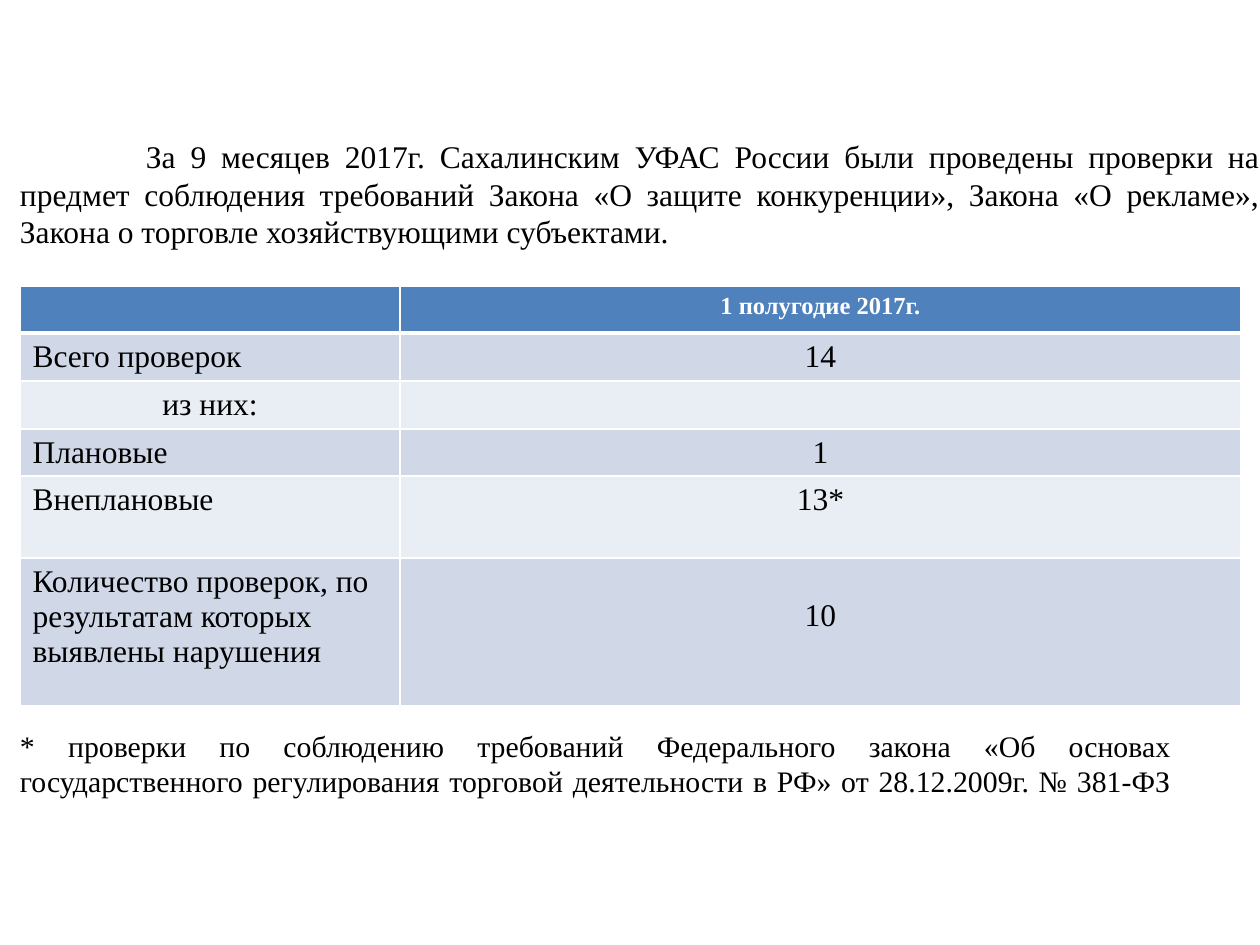
from lxml import etree
from pptx import Presentation
from pptx.dml.color import RGBColor
from pptx.enum import text
from pptx.oxml import ns
from pptx import util as u

INTRO = ("\tЗа 9 месяцев 2017г. Сахалинским УФАС России были проведены проверки "
         "на предмет соблюдения требований Закона «О защите конкуренции», "
         "Закона «О рекламе», Закона о торговле хозяйствующими субъектами.")
# The closing line break makes the last line justified too.
NOTE = ("* проверки по соблюдению требований Федерального закона «Об основах "
        "государственного регулирования торговой деятельности в РФ» "
        "от 28.12.2009г. № 381-ФЗ\v")
ROWS = [
    ("", "1 полугодие 2017г."),
    ("Всего проверок", "14"),
    ("из них:", ""),
    ("Плановые", "1"),
    ("Внеплановые", "13*"),
    ("Количество проверок, по результатам которых выявлены нарушения", "10"),
]
COLS = [380, 841]
HIGH = [47, 48, 48, 47, 82, 148]
LEFT = 20
TAB = 126

FONT = "Times New Roman"
BLACK = RGBColor(0, 0, 0)
WHITE = RGBColor(255, 255, 255)
BLUE = RGBColor(0x4F, 0x81, 0xBD)
BANDS = [RGBColor(0xE9, 0xED, 0xF4), RGBColor(0xD0, 0xD8, 0xE8)]
ALIGN = text.PP_ALIGN


def px(n):
    return u.Emu(n * u.Inches(1) // 126)


def write(frame, words, size=18, color=BLACK, bold=False, align=ALIGN.LEFT):
    para = frame.paragraphs[0]
    para.text = words
    para.alignment = align
    if "\t" in words:
        stops = etree.SubElement(para._p.get_or_add_pPr(), ns.qn("a:tabLst"))
        etree.SubElement(stops, ns.qn("a:tab"), pos=str(px(TAB)), algn="l")
    font = para.font
    font.name, font.size, font.bold = FONT, u.Pt(size), bold
    font.color.rgb = color
    for run in para.runs:
        run.font.name, run.font.size = FONT, u.Pt(size)


def block(words, top, width, height, size, foot=0):
    """Add a justified text box, centred above a margin of foot px."""
    frame = slide.shapes.add_textbox(px(LEFT), px(top), px(width), px(height)).text_frame
    frame.word_wrap = True
    frame.vertical_anchor = text.MSO_ANCHOR.MIDDLE
    frame.margin_left = frame.margin_right = frame.margin_top = 0
    frame.margin_bottom = px(foot)
    write(frame, words, size=size, align=ALIGN.JUSTIFY)


def edge(cell, base):
    """Draw white cell borders; base is the bottom width in points."""
    props = cell._tc.get_or_add_tcPr()
    for i, (tag, wide) in enumerate([("lnL", 1), ("lnR", 1), ("lnT", 1), ("lnB", base)]):
        line = etree.Element(ns.qn("a:" + tag), w=str(u.Pt(wide)))
        fill = etree.SubElement(line, ns.qn("a:solidFill"))
        etree.SubElement(fill, ns.qn("a:srgbClr"), val=str(WHITE))
        props.insert(i, line)


def grid(top):
    table = slide.shapes.add_table(len(ROWS), len(COLS), px(LEFT), px(top),
                                   px(sum(COLS)), px(sum(HIGH))).table
    for col, wide in zip(table.columns, COLS):
        col.width = px(wide)
    for r, (row, high) in enumerate(zip(ROWS, HIGH)):
        table.rows[r].height = px(high)
        head = r == 0
        for c, words in enumerate(row):
            cell = table.cell(r, c)
            cell.margin_bottom = px(2)
            cell.fill.solid()
            cell.fill.fore_color.rgb = BLUE if head else BANDS[r % 2]
            mid = c == 1 or words == "из них:"
            write(cell.text_frame, words, size=14 if head else 18,
                  color=WHITE if head else BLACK, bold=head,
                  align=ALIGN.CENTER if mid else ALIGN.LEFT)
            edge(cell, 3 if head else 1)
    # The last count sits level with the second line of its label.
    table.cell(len(ROWS) - 1, 1).margin_top = px(41)


deck = Presentation()
deck.slide_width, deck.slide_height = px(1260), px(945)
slide = deck.slides.add_slide(deck.slide_layouts[6])
block(INTRO, 118, 1240, 187, 18, foot=36)
grid(286)
block(NOTE, 727, 1151, 108, 17)
deck.save("out.pptx")
